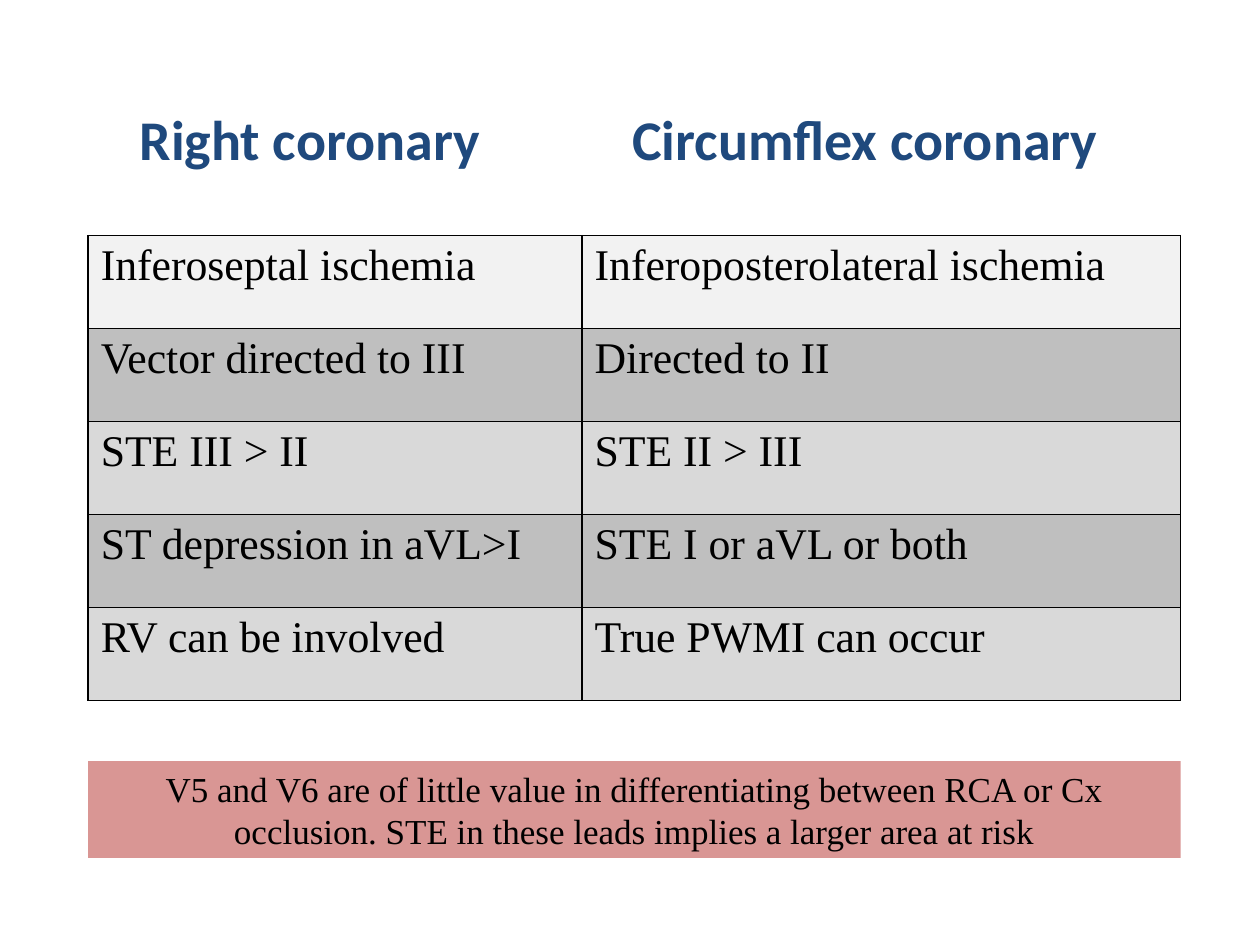
from lxml import etree
from pptx import Presentation
from pptx.dml.color import RGBColor
from pptx.enum import shapes, text
from pptx.oxml import ns
from pptx.util import Inches, Pt

LEFT, WIDTH = 0.7, 8.67
COLUMN_WIDTHS = (3.92, 4.75)
ROW_HEIGHT = 0.738
SERIF = "Times New Roman"
ROWS = [
    ("F2F2F2", "Inferoseptal ischemia", "Inferoposterolateral ischemia"),
    ("BFBFBF", "Vector directed to III", "Directed to II"),
    ("D9D9D9", "STE III > II", "STE II > III"),
    ("BFBFBF", "ST depression in aVL>I", "STE I or aVL or both"),
    ("D9D9D9", "RV can be involved", "True PWMI can occur"),
]


def color(value):
    return RGBColor.from_string(value)


def fill_solid(item, value):
    item.fill.solid()
    item.fill.fore_color.rgb = color(value)


def write(frame, content, size, name, value, bold=False):
    frame.text = content
    paragraph = frame.paragraphs[0]
    font = paragraph.font
    font.size, font.name, font.bold = Pt(size), name, bold
    font.color.rgb = color(value)
    return paragraph


def add_borders(cell, value, width):
    """Draw all four cell edges; borders must precede the fill in the XML."""
    properties = cell._tc.get_or_add_tcPr()
    for index, side in enumerate(("lnL", "lnR", "lnT", "lnB")):
        line = etree.Element(ns.qn(f"a:{side}"), w=str(Pt(width)))
        fill = etree.SubElement(line, ns.qn("a:solidFill"))
        etree.SubElement(fill, ns.qn("a:srgbClr"), val=value)
        properties.insert(index, line)


def add_comparison_table(slide):
    frame = slide.shapes.add_table(
        len(ROWS), len(COLUMN_WIDTHS), Inches(LEFT), Inches(1.87),
        Inches(WIDTH), Inches(ROW_HEIGHT * len(ROWS)))
    table = frame.table
    for column, width in zip(table.columns, COLUMN_WIDTHS):
        column.width = Inches(width)
    table.first_row = table.horz_banding = False
    for row, (shade, *contents) in zip(table.rows, ROWS):
        row.height = Inches(ROW_HEIGHT)
        for cell, content in zip(row.cells, contents):
            write(cell.text_frame, content, 25, SERIF, "000000")
            fill_solid(cell, shade)
            add_borders(cell, "000000", 1)


def add_heading(slide, content, left, width):
    box = slide.shapes.add_textbox(
        Inches(left), Inches(0.78), Inches(width), Inches(0.64))
    frame = box.text_frame
    frame.word_wrap = False
    frame.auto_size = text.MSO_AUTO_SIZE.SHAPE_TO_FIT_TEXT
    write(frame, content, 32, "Calibri", "1F497D", bold=True)


def add_note(slide, content):
    shape = slide.shapes.add_shape(
        shapes.MSO_SHAPE.RECTANGLE, Inches(LEFT), Inches(6.04),
        Inches(WIDTH), Inches(0.77))
    shape.shadow.inherit = False
    fill_solid(shape, "D99694")
    shape.line.fill.background()
    frame = shape.text_frame
    frame.word_wrap = True
    frame.auto_size = text.MSO_AUTO_SIZE.SHAPE_TO_FIT_TEXT
    frame.vertical_anchor = text.MSO_ANCHOR.TOP
    paragraph = write(frame, content, 20, SERIF, "000000")
    paragraph.alignment = text.PP_ALIGN.CENTER


def main():
    presentation = Presentation()
    presentation.slide_width = Inches(10)
    presentation.slide_height = Inches(7.5)
    slide = presentation.slides.add_slide(presentation.slide_layouts[6])
    add_comparison_table(slide)
    add_heading(slide, "Right coronary", 1.01, 2.95)
    add_heading(slide, "Circumflex coronary", 4.92, 4.07)
    add_note(slide, "V5 and V6 are of little value in differentiating between "
                    "RCA or Cx occlusion. STE in these leads implies a larger "
                    "area at risk")
    presentation.save("out.pptx")


if __name__ == "__main__":
    main()
